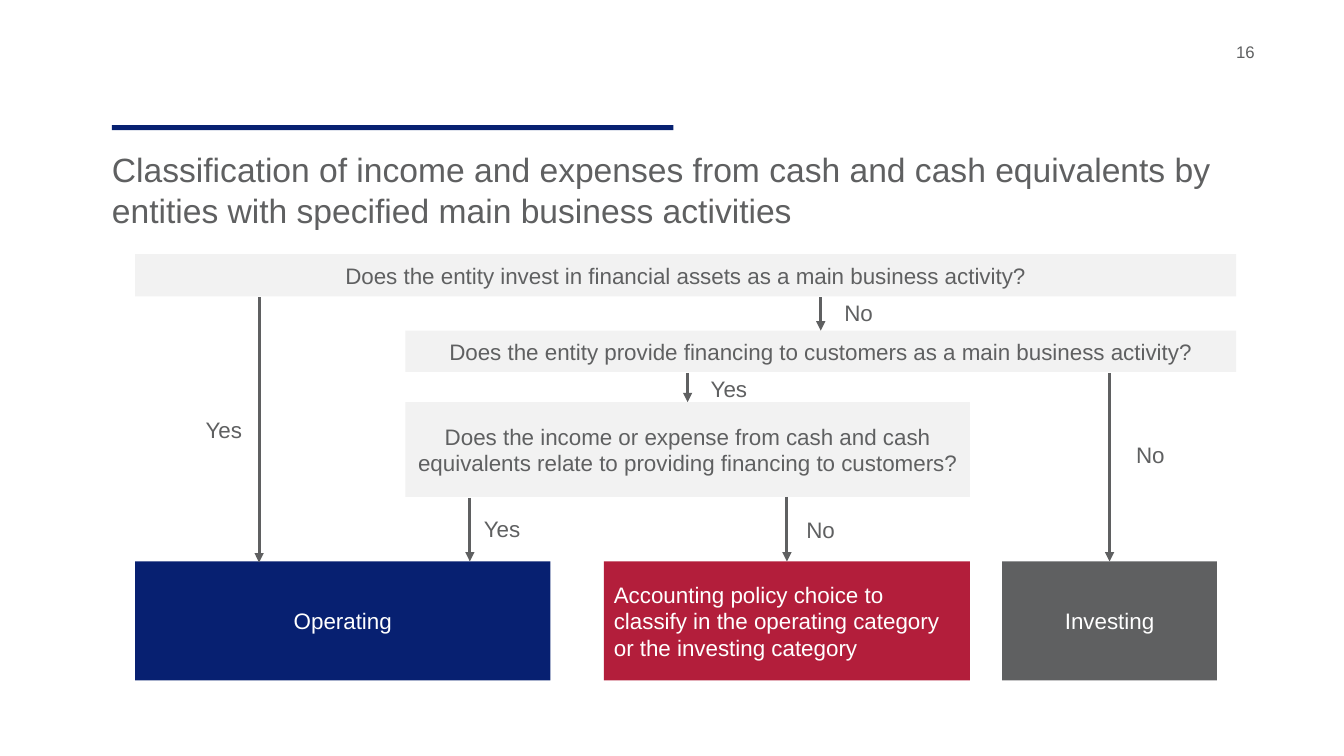
"""Build a decision-tree slide on classifying income and expenses from cash."""
from dataclasses import dataclass
from typing import Optional

import lxml.etree
import pptx
import pptx.dml.color
import pptx.enum.shapes
import pptx.enum.text
import pptx.oxml.ns
import pptx.util

Inches = pptx.util.Inches
Align = pptx.enum.text.PP_ALIGN
Anchor = pptx.enum.text.MSO_ANCHOR


@dataclass(frozen=True)
class Theme:
    font: str = "Arial"
    text: str = "5F6061"
    white: str = "FFFFFF"
    question: str = "F2F2F2"
    rule: str = "072171"
    operating: str = "072071"
    policy: str = "B31E3B"
    title_size: float = 24
    body_size: float = 16
    number_size: float = 12
    arrow_width: float = 2.25


THEME = Theme()


@dataclass(frozen=True)
class Box:
    text: str
    left: float
    top: float
    width: float
    height: float
    fill: str = THEME.question
    color: str = THEME.text
    align: Align = Align.CENTER

    @property
    def center(self) -> float:
        return self.left + self.width / 2


@dataclass(frozen=True)
class Label:
    text: str
    left: float
    top: float
    width: float
    height: float


@dataclass(frozen=True)
class Arrow:
    x: float
    top: float
    bottom: float
    target: Optional[Box] = None


OUTCOME_TOP, OUTCOME_HEIGHT = 5.57, 1.18
INVEST = Box("Does the entity invest in financial assets as a main business activity?",
             1.34, 2.52, 10.92, 0.42)
FINANCE = Box("Does the entity provide financing to customers as a main business activity?",
              4.02, 3.28, 8.24, 0.41)
RELATE = Box("Does the income or expense from cash and cash equivalents relate to "
             "providing financing to customers?", 4.02, 3.99, 5.6, 0.94)
INVEST_YES = Box("Yes", 1.74, 4.14, 0.96, 0.24, THEME.white)
OPERATING = Box("Operating", 1.34, OUTCOME_TOP, 4.12, OUTCOME_HEIGHT,
                THEME.operating, THEME.white)
POLICY = Box("Accounting policy choice to classify in the operating category "
             "or the investing category", 5.99, OUTCOME_TOP, 3.63, OUTCOME_HEIGHT,
             THEME.policy, THEME.white, Align.LEFT)
INVESTING = Box("Investing", 9.94, OUTCOME_TOP, 2.13, OUTCOME_HEIGHT,
                THEME.text, THEME.white)
BOXES = [INVEST, FINANCE, RELATE, INVEST_YES, OPERATING, POLICY, INVESTING]

LABELS = [
    Label("No", 8.14, 2.95, 0.75, 0.31),
    Label("No", 10.93, 4.34, 0.96, 0.34),
    Label("Yes", 6.75, 3.71, 0.96, 0.28),
    Label("Yes", 4.5, 5.14, 0.96, 0.21),
    Label("No", 7.66, 5.15, 0.96, 0.21),
]

ARROWS = [
    Arrow(2.57, 2.95, 5.58),
    Arrow(FINANCE.center, 2.95, FINANCE.top, FINANCE),
    Arrow(RELATE.center, 3.7, RELATE.top, RELATE),
    Arrow(INVESTING.center, 3.7, OUTCOME_TOP, INVESTING),
    Arrow(4.66, 4.94, OUTCOME_TOP),
    Arrow(POLICY.center, 4.93, OUTCOME_TOP, POLICY),
]


def rgb(value: str) -> pptx.dml.color.RGBColor:
    return pptx.dml.color.RGBColor.from_string(value)


def write(shape, text: str, size: float, color: str, align: Align, anchor: Anchor) -> None:
    frame = shape.text_frame
    frame.text = text
    frame.word_wrap = True
    frame.auto_size = pptx.enum.text.MSO_AUTO_SIZE.NONE
    frame.vertical_anchor = anchor
    paragraph = frame.paragraphs[0]
    paragraph.alignment = align
    font = paragraph.runs[0].font
    font.name, font.size = THEME.font, pptx.util.Pt(size)
    font.color.rgb = rgb(color)


def add_rectangle(slide, left: float, top: float, width: float, height: float, fill: str):
    shape = slide.shapes.add_shape(pptx.enum.shapes.MSO_SHAPE.RECTANGLE, Inches(left),
                                   Inches(top), Inches(width), Inches(height))
    shape.shadow.inherit = False
    shape.fill.solid()
    shape.fill.fore_color.rgb = rgb(fill)
    shape.line.fill.background()
    return shape


def add_box(slide, box: Box):
    shape = add_rectangle(slide, box.left, box.top, box.width, box.height, box.fill)
    write(shape, box.text, THEME.body_size, box.color, box.align, Anchor.MIDDLE)
    return shape


def add_label(slide, label: Label) -> None:
    shape = slide.shapes.add_textbox(Inches(label.left), Inches(label.top),
                                     Inches(label.width), Inches(label.height))
    shape.text_frame.margin_left = shape.text_frame.margin_right = 0
    write(shape, label.text, THEME.body_size, THEME.text, Align.CENTER, Anchor.MIDDLE)


def add_arrow(slide, arrow: Arrow, shapes: dict) -> None:
    connector = slide.shapes.add_connector(
        pptx.enum.shapes.MSO_CONNECTOR.STRAIGHT, Inches(arrow.x), Inches(arrow.top),
        Inches(arrow.x), Inches(arrow.bottom))
    if arrow.target:
        connector.end_connect(shapes[arrow.target], 0)
    connector.line.color.rgb = rgb(THEME.text)
    connector.line.width = pptx.util.Pt(THEME.arrow_width)
    qualify = pptx.oxml.ns.qn
    properties = connector._element.spPr
    outline = properties.find(qualify("a:ln"))
    lxml.etree.SubElement(outline, qualify("a:tailEnd"), type="triangle")
    lxml.etree.SubElement(properties, qualify("a:effectLst"))


def add_heading(slide) -> None:
    add_rectangle(slide, 1.11, 1.24, 5.57, 0.05, THEME.rule)
    title = slide.shapes.title
    title.left, title.top = Inches(1.01), Inches(1.43)
    title.width, title.height = Inches(11.12), Inches(0.84)
    write(title, "Classification of income and expenses from cash and cash equivalents by "
          "entities with specified main business activities",
          THEME.title_size, THEME.text, Align.LEFT, Anchor.TOP)
    number = slide.shapes.add_textbox(Inches(12.26), Inches(0.41), Inches(0.67), Inches(0.29))
    frame = number.text_frame
    frame.margin_left = frame.margin_right = frame.margin_top = frame.margin_bottom = 0
    write(number, "16", THEME.number_size, THEME.text, Align.LEFT, Anchor.TOP)


def main() -> None:
    presentation = pptx.Presentation()
    presentation.slide_width, presentation.slide_height = Inches(13.33), Inches(7.5)
    slide = presentation.slides.add_slide(presentation.slide_layouts.get_by_name("Title Only"))
    add_heading(slide)
    shapes = {box: add_box(slide, box) for box in BOXES}
    for label in LABELS:
        add_label(slide, label)
    for arrow in ARROWS:
        add_arrow(slide, arrow, shapes)
    presentation.save("out.pptx")


if __name__ == "__main__":
    main()
